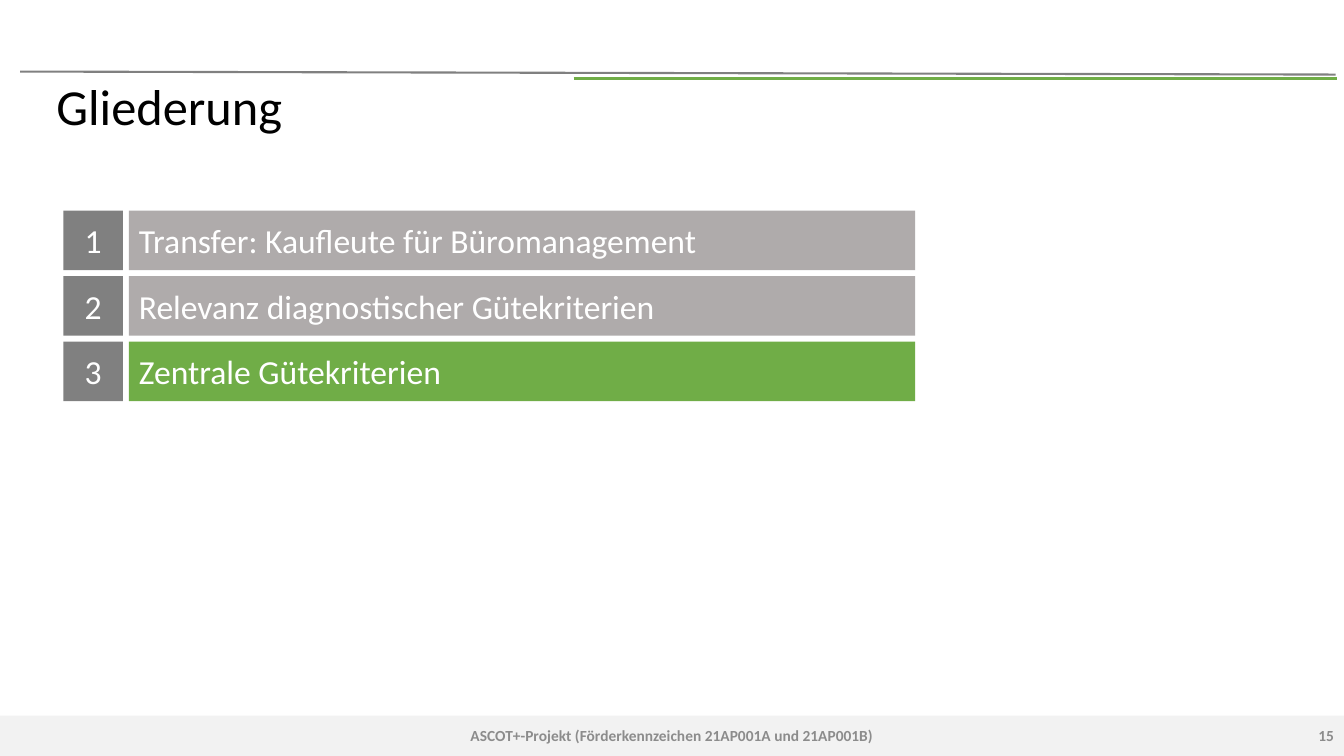
from dataclasses import dataclass

from lxml import etree
from pptx import Presentation
from pptx import util as u
from pptx.dml.color import RGBColor
from pptx.enum import shapes, text
from pptx.oxml.ns import qn


@dataclass(frozen=True)
class Theme:
    font: str = "Calibri"
    black: str = "000000"
    white: str = "FFFFFF"
    green: str = "70AD47"
    dark_grey: str = "808080"
    mid_grey: str = "AFABAB"
    footer_text: str = "8C8C8C"
    footer_band: str = "F2F2F2"
    title_size: float = 36
    agenda_size: float = 24
    footer_size: float = 11


# Square grid: ten columns or rows to the inch
COLUMNS, ROWS = 133.33, 75


def grid(*cells):
    return [u.Inches(cell / 10) for cell in cells]


def write(frame, words, *, theme, size, color, bold=False,
          align=text.PP_ALIGN.LEFT, spacing=None):
    frame.word_wrap = True
    frame.vertical_anchor = text.MSO_ANCHOR.MIDDLE
    paragraph = frame.paragraphs[0]
    paragraph.alignment = align
    if spacing:
        paragraph.line_spacing = spacing
    run = paragraph.add_run()
    run.text = words
    run.font.name = theme.font
    run.font.size = u.Pt(size)
    run.font.bold = bold
    run.font.color.rgb = RGBColor.from_string(color)


class SlideBuilder:
    def __init__(self, deck, theme):
        self.theme = theme
        self.slide = deck.slides.add_slide(deck.slide_layouts[5])

    def title(self, words, box):
        heading = self.slide.shapes.title
        heading.left, heading.top, heading.width, heading.height = grid(*box)
        write(heading.text_frame, words, theme=self.theme, spacing=0.9,
              size=self.theme.title_size, color=self.theme.black)

    def block(self, box, fill, words=None, **style):
        block = self.slide.shapes.add_shape(
            shapes.MSO_SHAPE.RECTANGLE, *grid(*box))
        block.shadow.inherit = False
        block.fill.solid()
        block.fill.fore_color.rgb = RGBColor.from_string(fill)
        block.line.fill.background()
        if words:
            write(block.text_frame, words, theme=self.theme,
                  size=self.theme.agenda_size, color=self.theme.white, **style)

    def rule(self, ends, color, weight):
        rule = self.slide.shapes.add_connector(
            shapes.MSO_CONNECTOR.STRAIGHT, *grid(*ends))
        rule.line.color.rgb = RGBColor.from_string(color)
        rule.line.width = u.Pt(weight)
        etree.SubElement(rule._element.spPr, qn("a:effectLst"))

    def footer(self, words, box, align):
        footer = self.slide.shapes.add_textbox(*grid(*box))
        write(footer.text_frame, words, theme=self.theme, bold=True,
              size=self.theme.footer_size, color=self.theme.footer_text,
              align=align)


def main():
    deck = Presentation()
    deck.slide_width, deck.slide_height = grid(COLUMNS, ROWS)
    theme = Theme()
    page = SlideBuilder(deck, theme)

    # Footer band and header rules
    footer_height = 4
    footer_top = ROWS - footer_height
    page.block((0, footer_top, COLUMNS, footer_height), theme.footer_band)
    page.rule((2, 7.1, 132.5, 7.4), theme.dark_grey, 1.5)
    page.rule((56.9, 7.8, 132.6, 7.8), theme.green, 2.25)

    # Title
    page.title("Gliederung", (4.6, 7.9, 122, 5.9))

    # Footer texts
    page.footer("ASCOT+-Projekt (Förderkennzeichen 21AP001A und 21AP001B)",
                ((COLUMNS - 45) / 2, footer_top, 45, footer_height),
                text.PP_ALIGN.CENTER)
    page.footer("15", (COLUMNS - 30, footer_top, 30, footer_height),
                text.PP_ALIGN.RIGHT)

    # Agenda: a numbered square and a topic bar per row
    topics = ["Transfer: Kaufleute für Büromanagement",
              "Relevanz diagnostischer Gütekriterien",
              "Zentrale Gütekriterien"]
    current_topic = 3
    left, top, side, gap, bar_width = 6.3, 20.9, 5.9, 0.6, 78
    for number, topic in enumerate(topics, start=1):
        row = top + (number - 1) * (side + gap)
        bar_color = theme.green if number == current_topic else theme.mid_grey
        page.block((left, row, side, side), theme.dark_grey, str(number),
                   align=text.PP_ALIGN.CENTER)
        page.block((left + side + gap, row, bar_width, side), bar_color, topic)

    deck.save("out.pptx")


if __name__ == "__main__":
    main()
